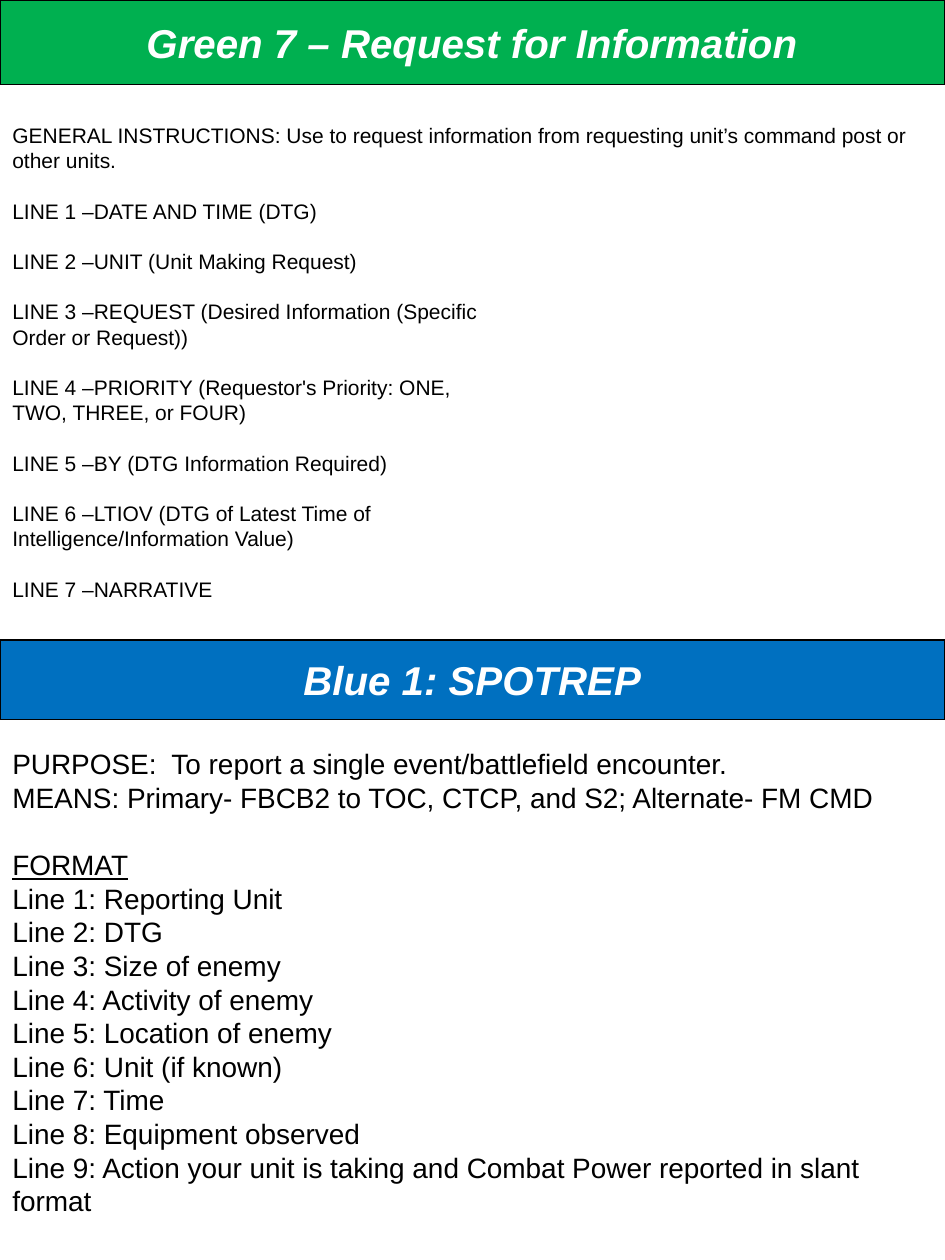
from pptx import Presentation
from pptx.dml.color import RGBColor
from pptx.enum.shapes import MSO_SHAPE
from pptx.enum.text import MSO_ANCHOR, MSO_AUTO_SIZE, PP_ALIGN
from pptx.util import Cm, Pt

FONT = "Arial"
GREEN = RGBColor(0x00, 0xB0, 0x50)
BLUE = RGBColor(0x00, 0x70, 0xC0)
BLACK = RGBColor(0x00, 0x00, 0x00)
WHITE = RGBColor(0xFF, 0xFF, 0xFF)

SLIDE_WIDTH = Cm(19.05)
SLIDE_HEIGHT = Cm(25.4)
LINE_HEIGHT = 1.2  # relative to the font size

# Each block is a list of lines; a blank line's height separates blocks.
REQUEST_BLOCKS = [
    ["GENERAL INSTRUCTIONS: Use to request information from requesting "
     "unit’s command post or other units."],
    ["LINE 1 –DATE AND TIME (DTG)"],
    ["LINE 2 –UNIT (Unit Making Request)"],
    ["LINE 3 –REQUEST (Desired Information (Specific", "Order or Request))"],
    ["LINE 4 –PRIORITY (Requestor's Priority: ONE,", "TWO, THREE, or FOUR)"],
    ["LINE 5 –BY (DTG Information Required)"],
    ["LINE 6 –LTIOV (DTG of Latest Time of", "Intelligence/Information Value)"],
    ["LINE 7 –NARRATIVE"],
]
SPOTREP_HEADING = "FORMAT"
SPOTREP_BLOCKS = [
    ["PURPOSE:  To report a single event/battlefield encounter.",
     "MEANS: Primary- FBCB2 to TOC, CTCP, and S2; Alternate- FM CMD"],
    [SPOTREP_HEADING,
     "Line 1: Reporting Unit",
     "Line 2: DTG",
     "Line 3: Size of enemy",
     "Line 4: Activity of enemy",
     "Line 5: Location of enemy",
     "Line 6: Unit (if known)",
     "Line 7: Time",
     "Line 8: Equipment observed",
     "Line 9: Action your unit is taking and Combat Power reported in slant "
     "format"],
]


def add_run(paragraph, text, size, color):
    run = paragraph.add_run()
    run.text = text
    run.font.name = FONT
    run.font.size = Pt(size)
    run.font.color.rgb = color
    return run


def format_banner(shape, text, top, height, color):
    """Turn a title placeholder or a rectangle into a full-width banner."""
    shape.left, shape.top = Cm(0), top
    shape.width, shape.height = SLIDE_WIDTH, height
    shape.fill.solid()
    shape.fill.fore_color.rgb = color
    shape.line.color.rgb = BLACK
    shape.line.width = Pt(0.75)

    frame = shape.text_frame
    frame.auto_size = MSO_AUTO_SIZE.NONE
    frame.vertical_anchor = MSO_ANCHOR.MIDDLE
    paragraph = frame.paragraphs[0]
    paragraph.alignment = PP_ALIGN.CENTER
    run = add_run(paragraph, text, 23, WHITE)
    run.font.bold = True
    run.font.italic = True


def add_instructions(slide, blocks, top, width, height, size, heading=None):
    """Add blocks of lines in a text box, underlining the heading line."""
    frame = slide.shapes.add_textbox(Cm(0), top, width, height).text_frame
    frame.word_wrap = True
    frame.auto_size = MSO_AUTO_SIZE.NONE
    frame.margin_top = Cm(0.18)
    pitch = Pt(size * LINE_HEIGHT)
    for block_index, block in enumerate(blocks):
        for line_index, line in enumerate(block):
            is_first = block_index == line_index == 0
            paragraph = frame.paragraphs[0] if is_first else frame.add_paragraph()
            paragraph.line_spacing = pitch
            if line_index == 0 and not is_first:
                paragraph.space_before = pitch
            run = add_run(paragraph, line, size, BLACK)
            if line == heading:
                run.font.underline = True


def main():
    presentation = Presentation()
    presentation.slide_width = SLIDE_WIDTH
    presentation.slide_height = SLIDE_HEIGHT
    title_only = presentation.slide_layouts[5]
    slide = presentation.slides.add_slide(title_only)

    format_banner(slide.shapes.title, "Green 7 – Request for Information",
                  Cm(0), Cm(1.7), GREEN)
    add_instructions(slide, REQUEST_BLOCKS, Cm(2.29), SLIDE_WIDTH, Cm(10), 12)

    spotrep_banner = slide.shapes.add_shape(
        MSO_SHAPE.RECTANGLE, Cm(0), Cm(12.9), SLIDE_WIDTH, Cm(1.6))
    spotrep_banner.shadow.inherit = False
    format_banner(spotrep_banner, "Blue 1: SPOTREP", Cm(12.9), Cm(1.6), BLUE)
    add_instructions(slide, SPOTREP_BLOCKS, Cm(14.88), Cm(18.42), Cm(10.52), 16,
                     SPOTREP_HEADING)

    presentation.save("out.pptx")


if __name__ == "__main__":
    main()
